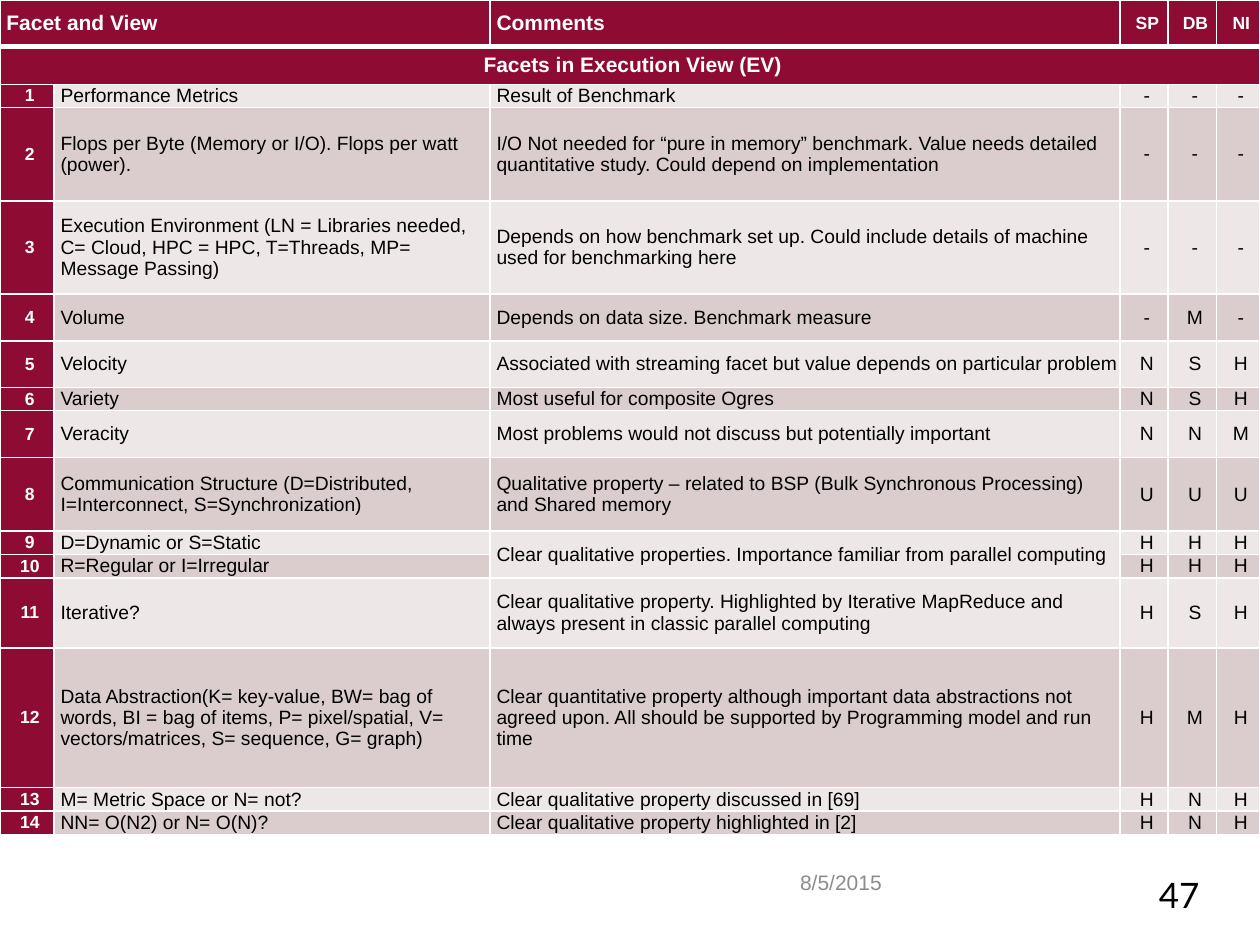
"""Build a slide with a table of the facets in the execution view."""
from lxml import etree
from pptx import Presentation
from pptx import util as u
from pptx.dml import color
from pptx.enum import text
from pptx.oxml import ns

THEME = {
    "font": "Arial", "number_font": "Lato",
    "accent": "8E0C33", "bands": ("EEE7E8", "DBCCCE"),
    "light": "FFFFFF", "dark": "000000", "muted": "8C8C8C",
    "header": 12, "label": 10, "body": 11, "date": 12, "number": 20,
    "border": 1, "header_border": 3,
}

HEADER = ("Facet and View", "", "Comments", "SP", "DB", "NI")
SECTION = "Facets in Execution View (EV)"
SHARED_COMMENT_FACET = 9
FACETS = [
    ("Performance Metrics", "Result of Benchmark", "---"),
    ("Flops per Byte (Memory or I/O). Flops per watt (power).",
     "I/O Not needed for “pure in memory” benchmark. Value needs detailed "
     "quantitative study. Could depend on implementation", "---"),
    ("Execution Environment (LN = Libraries needed, C= Cloud, HPC = HPC, "
     "T=Threads, MP= Message Passing)",
     "Depends on how benchmark set up. Could include details of machine used "
     "for benchmarking here", "---"),
    ("Volume", "Depends on data size. Benchmark measure", "-M-"),
    ("Velocity", "Associated with streaming facet but value depends on "
     "particular problem", "NSH"),
    ("Variety", "Most useful for composite Ogres", "NSH"),
    ("Veracity", "Most problems would not discuss but potentially important", "NNM"),
    ("Communication Structure (D=Distributed, I=Interconnect, S=Synchronization)",
     "Qualitative property – related to BSP (Bulk Synchronous Processing) and "
     "Shared memory", "UUU"),
    ("D=Dynamic or S=Static", "Clear qualitative properties. Importance familiar "
     "from parallel computing", "HHH"),
    ("R=Regular or I=Irregular", "", "HHH"),
    ("Iterative?", "Clear qualitative property. Highlighted by Iterative MapReduce "
     "and always present in classic parallel computing", "HSH"),
    ("Data Abstraction(K= key-value, BW= bag of words, BI = bag of items, "
     "P= pixel/spatial, V= vectors/matrices, S= sequence, G= graph)",
     "Clear quantitative property although important data abstractions not agreed "
     "upon. All should be supported by Programming model and run time", "HMH"),
    ("M= Metric Space or N= not?", "Clear qualitative property discussed in [69]", "HNH"),
    ("NN= O(N2) or N= O(N)?", "Clear qualitative property highlighted in [2]", "HNH"),
]

COLUMN_WIDTHS = (1.09, 8.79, 12.7, 0.97, 0.97, 0.88)
LINE_HEIGHT = 0.47
FACET_LINES = (1, 4, 4, 2, 2, 1, 2, 3.17, 1, 1, 3, 6, 1, 1)
ROW_HEIGHTS = [0.94, 0.76] + [lines * LINE_HEIGHT for lines in FACET_LINES]

FOOTERS = [
    ("8/5/2015", (15.88, 17.27, 5.72, 1.02), text.MSO_ANCHOR.MIDDLE,
     ("date", "muted", "font")),
    ("47", (23.11, 17.48, 1.83, 0.81), text.MSO_ANCHOR.TOP,
     ("number", "dark", "number_font")),
]


def apply(target, values):
    for name, value in values.items():
        setattr(target, name, value)


def write(paragraph, content, size, ink, font="font", bold=False, centred=False):
    paragraph.alignment = text.PP_ALIGN.CENTER if centred else text.PP_ALIGN.LEFT
    run = paragraph.add_run()
    run.text = content
    apply(run.font, {"name": THEME[font], "size": u.Pt(THEME[size]), "bold": bold})
    run.font.color.rgb = color.RGBColor.from_string(THEME[ink])


def add_borders(cell, row):
    properties = cell._tc.get_or_add_tcPr()
    for side in "LRTB":
        thick = (row, side) in ((0, "B"), (1, "T"))
        width = THEME["header_border" if thick else "border"]
        line = etree.SubElement(properties, ns.qn("a:ln" + side), w=str(u.Pt(width)))
        fill = etree.SubElement(line, ns.qn("a:solidFill"))
        etree.SubElement(fill, ns.qn("a:srgbClr"), val=THEME["light"])


def format_cell(cell, row, column, content):
    is_header, is_label = row < 2, column == 0
    strong = is_header or is_label
    is_rating = column > 2
    small = is_label and not is_header or row == 0 and is_rating
    size = "label" if small else "header" if is_header else "body"
    apply(cell, {
        "margin_left": u.Cm(0.13), "margin_top": 0, "margin_bottom": 0,
        "margin_right": 0 if row == 0 and is_rating else u.Cm(0.02),
        "vertical_anchor": text.MSO_ANCHOR.MIDDLE,
    })
    add_borders(cell, row)
    cell.fill.solid()
    fill = THEME["accent"] if strong else THEME["bands"][row % 2]
    cell.fill.fore_color.rgb = color.RGBColor.from_string(fill)
    write(cell.text_frame.paragraphs[0], content, size, "light" if strong else "dark",
          bold=strong, centred=is_rating or is_label and row > 0)


def add_facet_table(slide):
    rows = [HEADER, (SECTION,) + ("",) * 5]
    rows += [(str(number), facet, comment, *ratings)
             for number, (facet, comment, ratings) in enumerate(FACETS, 1)]
    table = slide.shapes.add_table(
        len(rows), len(COLUMN_WIDTHS), 0, 0,
        u.Cm(sum(COLUMN_WIDTHS)), u.Cm(sum(ROW_HEIGHTS))).table
    for column, width in zip(table.columns, COLUMN_WIDTHS):
        column.width = u.Cm(width)
    for row, height in zip(table.rows, ROW_HEIGHTS):
        row.height = u.Cm(height)
    shared = SHARED_COMMENT_FACET + 1
    for first, last in (((0, 0), (0, 1)), ((1, 0), (1, 5)), ((shared, 2), (shared + 1, 2))):
        table.cell(*first).merge(table.cell(*last))
    for row, contents in enumerate(rows):
        for column, content in enumerate(contents):
            format_cell(table.cell(row, column), row, column, content)


def add_footer(slide, content, place, anchor, style):
    frame = slide.shapes.add_textbox(*map(u.Cm, place)).text_frame
    apply(frame, {"word_wrap": True, "vertical_anchor": anchor})
    write(frame.paragraphs[0], content, *style)


def main():
    presentation = Presentation()
    apply(presentation, {"slide_width": u.Cm(25.4), "slide_height": u.Cm(19.05)})
    slide = presentation.slides.add_slide(presentation.slide_layouts[6])
    for footer in FOOTERS:
        add_footer(slide, *footer)
    add_facet_table(slide)
    presentation.save("out.pptx")


if __name__ == "__main__":
    main()
